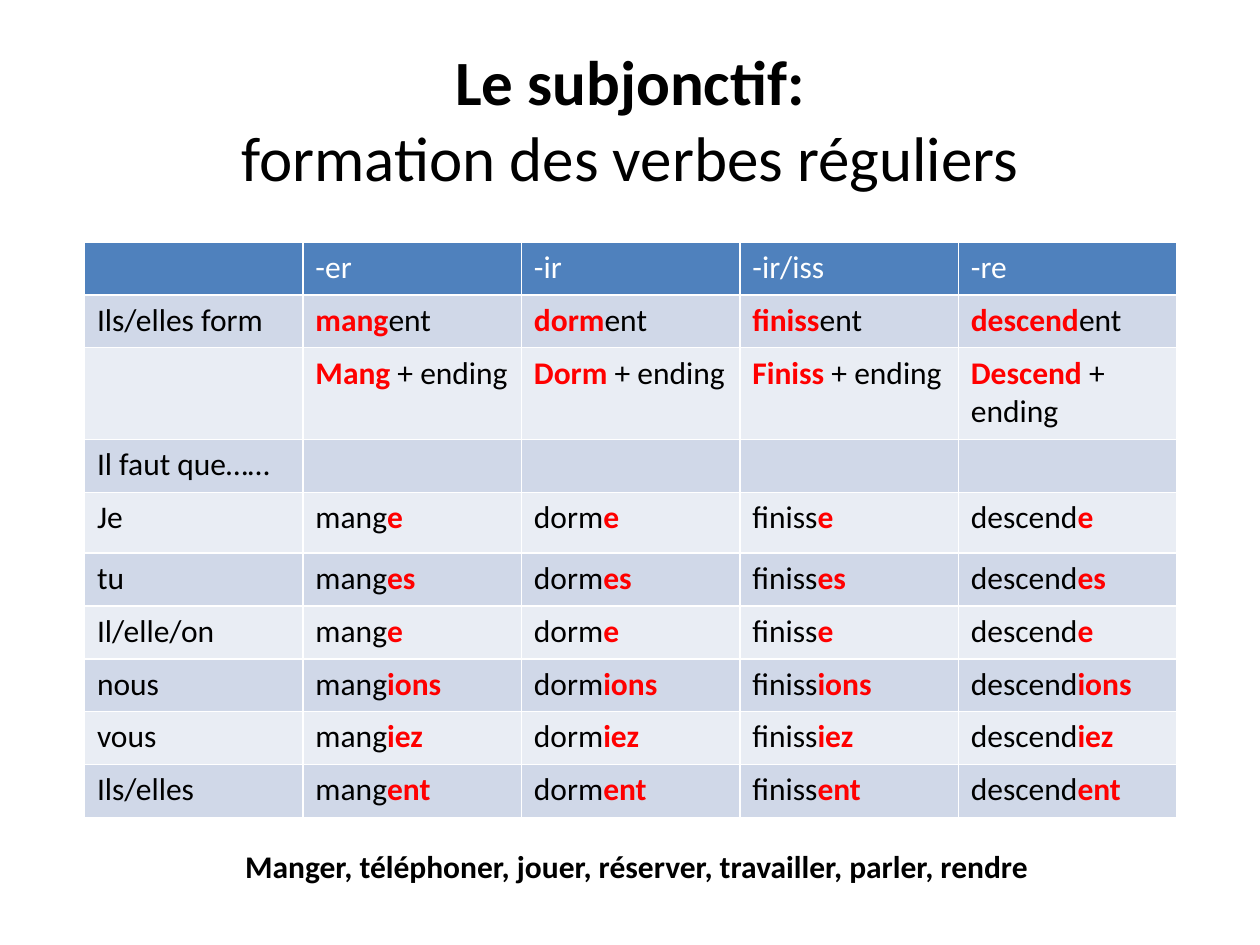
from copy import deepcopy

from pptx import Presentation
from pptx.dml.color import RGBColor
from pptx.enum.text import MSO_ANCHOR, PP_ALIGN
from pptx.util import Inches, Pt

CENTER = PP_ALIGN.CENTER
MIDDLE = MSO_ANCHOR.MIDDLE
BLACK, WHITE, RED = "000000", "FFFFFF", "FF0000"
HEAD, DARK, LIGHT = "4F81BD", "D0D8E8", "E9EDF4"


def color(code):
    return RGBColor.from_string(code)


def style(run, size, code=BLACK, bold=False):
    font = run.font
    font.name, font.size, font.bold = "Calibri", Pt(size), bold
    font.color.rgb = color(code)


prs = Presentation()
prs.slide_width, prs.slide_height = Inches(10), Inches(7.5)
slide = prs.slides.add_slide(prs.slide_layouts[5])

# Title: bold first line, plain second line
title = slide.shapes.title
title.left, title.top = Inches(0.5), Inches(0.3)
title.width, title.height = Inches(9), Inches(1.28)
title.text_frame.vertical_anchor = MIDDLE
line = title.text_frame.paragraphs[0]
line.text = "Le subjonctif:\vformation des verbes réguliers"
line.alignment = CENTER
for run, bold in zip(line.runs, (True, False)):
    style(run, 36, bold=bold)
# The line break takes the size of the text around it
for gap in line._p.findall("{*}br"):
    gap.append(deepcopy(line.runs[0].font._element))

# Table content: each cell is a list of (text, colour, bold) parts
stems = ["mang", "dorm", "finiss", "descend"]
forms = [("Je", "e"), ("tu", "es"), ("Il/elle/on", "e"),
         ("nous", "ions"), ("vous", "iez"), ("Ils/elles", "ent")]
rows = [
    [[]] + [[(end, WHITE, False)] for end in ("-er", "-ir", "-ir/iss", "-re")],
    [[("Ils/elles form", BLACK, False)]]
    + [[(stem, RED, True), ("ent", BLACK, False)] for stem in stems],
    [[]] + [[(stem.capitalize(), RED, True), (" + ending", BLACK, False)]
            for stem in stems],
    [[("Il faut que……", BLACK, False)], [], [], [], []],
]
for who, end in forms:
    rows.append([[(who, BLACK, False)]]
                + [[(stem, BLACK, False), (end, RED, True)] for stem in stems])

# Table
table = slide.shapes.add_table(len(rows), 5, Inches(0.67), Inches(1.92),
                               Inches(8.67), Inches(4.58)).table
tall = {2: 0.73, 4: 0.48}
for r, row in enumerate(rows):
    table.rows[r].height = Inches(tall.get(r, 0.42))
    fill = HEAD if r == 0 else DARK if r % 2 else LIGHT
    for c, parts in enumerate(row):
        cell = table.cell(r, c)
        cell.fill.solid()
        cell.fill.fore_color.rgb = color(fill)
        for text, code, bold in parts:
            run = cell.text_frame.paragraphs[0].add_run()
            run.text = text
            style(run, 18, code, bold)

# Verb list under the table
verbs = slide.shapes.add_textbox(Inches(0.77), Inches(6.67),
                                 Inches(8.57), Inches(0.4)).text_frame
verbs.word_wrap = True
verbs.text = "Manger, téléphoner, jouer, réserver, travailler, parler, rendre"
verbs.paragraphs[0].alignment = CENTER
style(verbs.paragraphs[0].runs[0], 18, bold=True)

prs.save("out.pptx")
